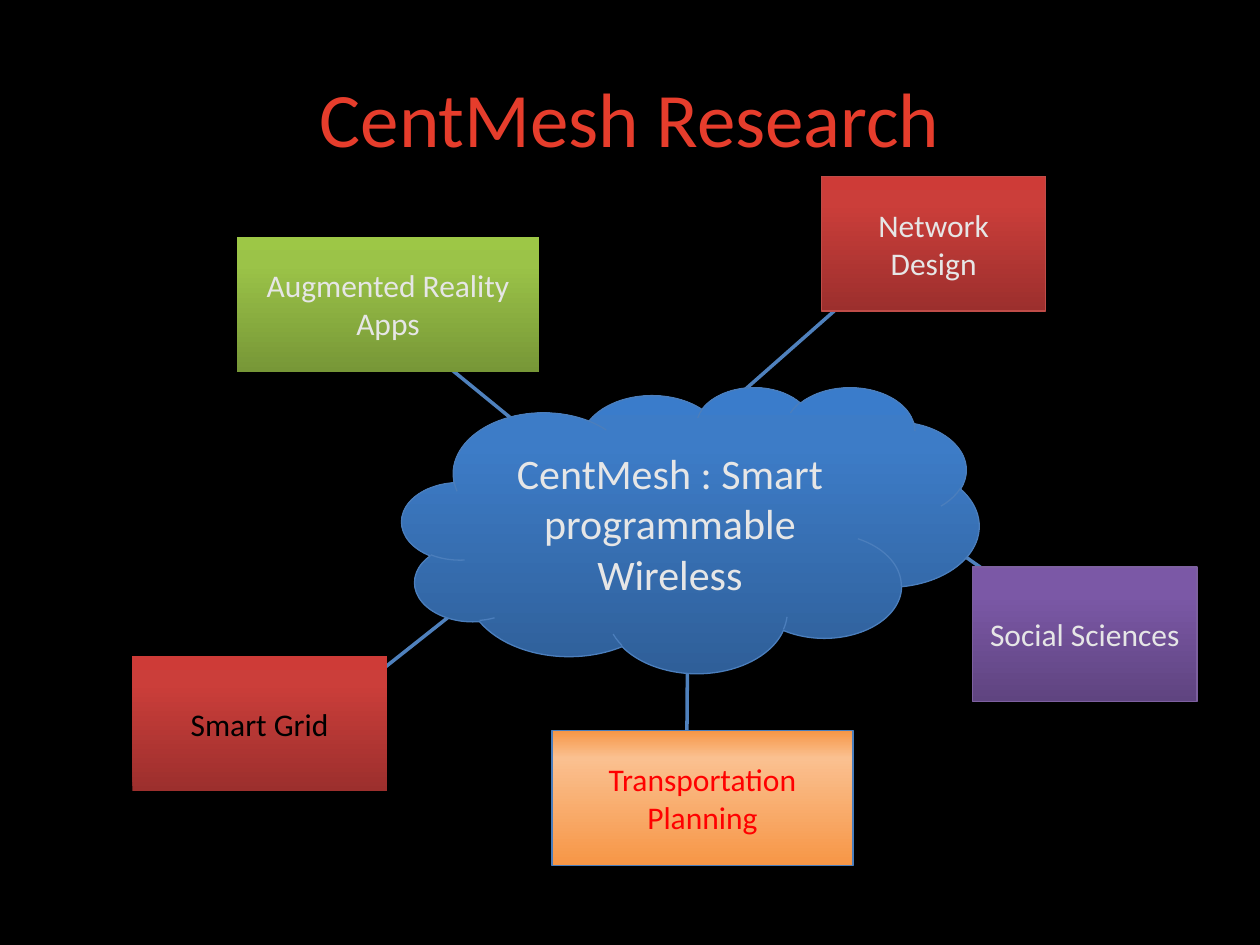
from copy import deepcopy
from dataclasses import dataclass

from pptx import Presentation
from pptx.dml.color import RGBColor
from pptx.enum.shapes import MSO_CONNECTOR as Link, MSO_SHAPE as Preset
from pptx.enum.text import MSO_ANCHOR as Anchor, PP_ALIGN as Align
from pptx.oxml.ns import qn
from pptx.oxml.xmlchemy import OxmlElement
from pptx.util import Inches, Pt

WIDTH, HEIGHT = 10, 7.5


@dataclass(frozen=True)
class Theme:
    font: str = "Calibri"
    background: str = "000000"
    title: str = "E63D2C"
    light: str = "E6E6E6"
    dark: str = "000000"
    alert: str = "FF0000"
    spoke: str = "4F81BD"
    blue_edge: str = "4B7EBC"
    red_edge: str = "BF4C48"
    purple_edge: str = "7D60A0"
    # Gradients run from the bottom edge to the top edge
    blue: tuple = ("2F5F99", "3D7CC7", "3A7CCB")
    green: tuple = ("779737", "9BC348", "9DC746")
    red: tuple = ("9C2F2D", "CB3E3A", "CE3B37")
    purple: tuple = ("5F4480", "7B58A6", "7C57A8")
    orange: tuple = ("F79646", "FAC090", "F79646")
    stops: tuple = (0, 0.8, 1)
    title_size: int = 44
    hub_size: int = 24
    topic_size: int = 18
    spoke_width: float = 2
    edge_width: float = 0.75


THEME = Theme()

# Topic: box, gradient, edge, text colour, spoke from the topic to the hub
TOPICS = {
    "Augmented Reality Apps": ((1.88, 1.88, 2.4, 1.07), THEME.green, None,
                               THEME.light, (3.31, 2.71, 4.62, 3.78)),
    "Network Design": ((6.52, 1.4, 1.78, 1.07), THEME.red, THEME.red_edge,
                       THEME.light, (6.88, 2.24, 4.86, 4.02)),
    "Social Sciences": ((7.72, 4.5, 1.78, 1.07), THEME.purple, THEME.purple_edge,
                        THEME.light, (7.95, 4.62, 6.4, 3.54)),
    "Transportation Planning": ((4.38, 5.8, 2.39, 1.07), THEME.orange, THEME.blue_edge,
                                THEME.alert, (5.45, 6.05, 5.46, 4.74)),
    "Smart Grid": ((1.05, 5.21, 2.02, 1.07), THEME.red, None,
                   THEME.dark, (2.71, 5.57, 3.91, 4.62)),
}


def rgb(value):
    return RGBColor.from_string(value)


def inches(lengths):
    return [Inches(length) for length in lengths]


def write(frame, words, size, colour):
    """Centre one run of text in a frame."""
    frame.word_wrap = True
    frame.vertical_anchor = Anchor.MIDDLE
    paragraph = frame.paragraphs[0]
    paragraph.alignment = Align.CENTER
    run = paragraph.add_run()
    run.text = words
    run.font.name = THEME.font
    run.font.size = Pt(size)
    run.font.color.rgb = rgb(colour)


def shade(fill, colours):
    """Fill with a three-stop gradient that rises from the bottom."""
    fill.gradient()
    fill.gradient_angle = 90
    last = fill.gradient_stops[-1]._gs
    last.addnext(deepcopy(last))
    for stop, position, colour in zip(fill.gradient_stops, THEME.stops, colours):
        stop.position = position
        stop.color.rgb = rgb(colour)


def add_title(slide, box, words):
    title = slide.shapes.add_textbox(*inches(box))
    write(title.text_frame, words, THEME.title_size, THEME.title)


def add_node(slide, preset, box, words, size, colour, gradient, edge):
    node = slide.shapes.add_shape(preset, *inches(box))
    node.shadow.inherit = False
    shade(node.fill, gradient)
    if edge:
        node.line.color.rgb = rgb(edge)
        node.line.width = Pt(THEME.edge_width)
    else:
        node.line.fill.background()
    write(node.text_frame, words, size, colour)


def add_spoke(slide, ends):
    spoke = slide.shapes.add_connector(Link.STRAIGHT, *inches(ends))
    spoke.line.color.rgb = rgb(THEME.spoke)
    spoke.line.width = Pt(THEME.spoke_width)
    spoke._element.find(qn("p:spPr")).append(OxmlElement("a:effectLst"))


def add_research_map(slide, hub_box):
    # Spokes lie behind the hub and the topics
    for *_, ends in TOPICS.values():
        add_spoke(slide, ends)
    # Hub
    add_node(slide, Preset.CLOUD, hub_box, "CentMesh : Smart programmable Wireless",
             THEME.hub_size, THEME.light, THEME.blue, THEME.blue_edge)
    # Topics
    for topic, (box, gradient, edge, colour, _) in TOPICS.items():
        add_node(slide, Preset.RECTANGLE, box, topic,
                 THEME.topic_size, colour, gradient, edge)


def main():
    deck = Presentation()
    deck.slide_width, deck.slide_height = inches((WIDTH, HEIGHT))
    slide = deck.slides.add_slide(deck.slide_layouts[6])
    slide.background.fill.solid()
    slide.background.fill.fore_color.rgb = rgb(THEME.background)
    add_title(slide, (0.05 * WIDTH, 0.04 * HEIGHT, 0.9 * WIDTH, HEIGHT / 6),
              "CentMesh Research")
    add_research_map(slide, (3.19, 3.07, 4.58, 2.27))
    deck.save("out.pptx")


if __name__ == "__main__":
    main()
